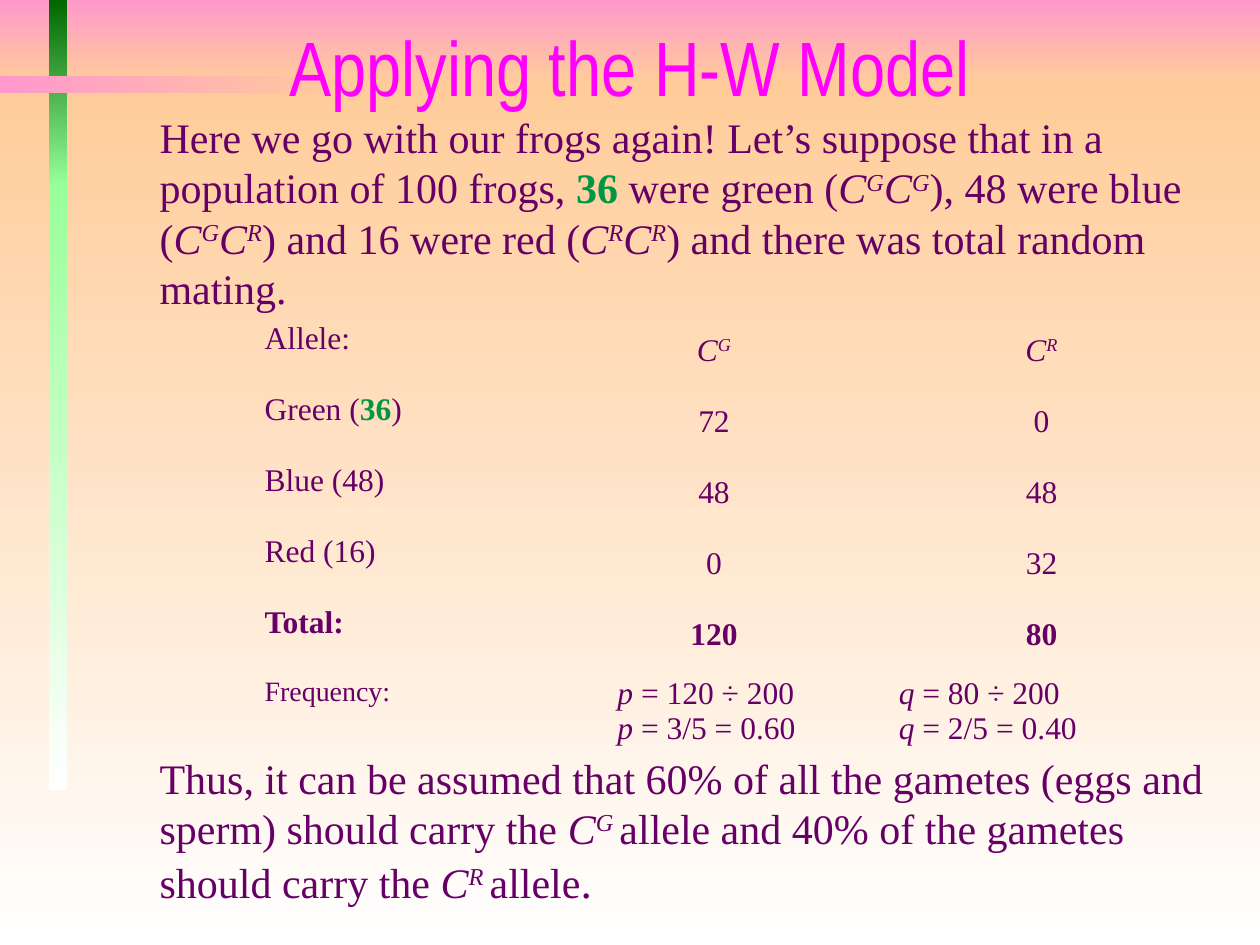
"""Build the slide that applies the Hardy-Weinberg model to a frog population."""
from lxml import etree
from pptx import Presentation
from pptx.dml.color import RGBColor
from pptx.enum.shapes import MSO_SHAPE
from pptx.enum.text import MSO_ANCHOR, MSO_AUTO_SIZE, PP_ALIGN
from pptx.oxml.ns import qn
from pptx.util import Pt

RECTANGLE = MSO_SHAPE.RECTANGLE
TOP, MIDDLE = MSO_ANCHOR.TOP, MSO_ANCHOR.MIDDLE
LEFT, CENTER = PP_ALIGN.LEFT, PP_ALIGN.CENTER
NO_AUTOFIT = MSO_AUTO_SIZE.NONE

PLUM = RGBColor(0x66, 0x00, 0x66)
MAGENTA = RGBColor(0xFF, 0x00, 0xFF)
FROG_GREEN = RGBColor(0x00, 0x96, 0x44)
PINK = RGBColor(0xFF, 0x99, 0xCC)
PEACH = RGBColor(0xFF, 0xCC, 0x99)
WHITE = RGBColor(0xFF, 0xFF, 0xFF)
DARK_GREEN = RGBColor(0x00, 0x66, 0x00)
LIGHT_GREEN = RGBColor(0x99, 0xFF, 0x99)

TITLE_FONT, TEXT_FONT = "Arial Narrow", "Times New Roman"
DOWN, RIGHTWARD = 270, 0
NO_TABLE_STYLE = "{2D5ABB26-0587-4C30-8999-92F81FD0307C}"

BACKDROP = [
    (0, 0, 720, 48, PINK, PEACH, DOWN),
    (0, 48, 720, 492, PEACH, WHITE, DOWN),
    (28, 0, 10.2, 106.5, DARK_GREEN, LIGHT_GREEN, DOWN),
    (28, 105, 10.2, 346.5, LIGHT_GREEN, WHITE, DOWN),
    (0, 43.4, 208, 10, PINK, PEACH, RIGHTWARD),
]


def allele(letter):
    """Return the spans of an allele symbol with its superscript."""
    return [("C", "italic"), (letter, "super")]


def genotype(first, second):
    """Return the spans of a bracketed pair of alleles."""
    return [("(", ""), *allele(first), *allele(second), (")", "")]


GREEN_COUNT = ("36", "green")
INTRO = [
    ("Here we go with our frogs again! Let’s suppose that in a population of 100 frogs, ", ""),
    GREEN_COUNT, (" were green ", ""), *genotype("G", "G"),
    (", 48 were blue ", ""), *genotype("G", "R"),
    (" and 16 were red ", ""), *genotype("R", "R"),
    (" and there was total random mating.", ""),
]
CONCLUSION = [
    ("Thus, it can be assumed that 60% of all the gametes (eggs and sperm) should carry the ", ""),
    *allele("G "), ("allele and 40% of the gametes should carry the ", ""),
    *allele("R "), ("allele", ""), (".", "large"),
]
COUNTS = [
    ([("Allele:", "")], allele("G"), allele("R")),
    ([("Green (", ""), GREEN_COUNT, (")", "")], [("72", "")], [("0", "")]),
    ([("Blue (48)", "")], [("48", "")], [("48", "")]),
    ([("Red (16)", "")], [("0", "")], [("32", "")]),
    ([("Total:", "bold")], [("120", "bold")], [("80", "bold")]),
]
FREQUENCIES = [("p", "= 120 ÷ 200", "= 3/5 = 0.60", 43.2),
               ("q", "= 80 ÷ 200", "= 2/5 = 0.40", 7.2)]


def write(paragraph, spans, size, align=LEFT):
    """Fill a paragraph with styled spans."""
    paragraph.alignment = align
    font = paragraph.font
    font.name, font.size, font.color.rgb = TEXT_FONT, Pt(size), PLUM
    for text, style in spans:
        run = paragraph.add_run()
        run.text = text
        if style in ("italic", "super"):
            run.font.italic = True
        if style in ("bold", "green"):
            run.font.bold = True
        if style == "super":
            run.font._element.set("baseline", "30000")
        if style == "green":
            run.font.color.rgb = FROG_GREEN
        if style == "large":
            run.font.size = Pt(size + 2)


def place(shape, left, top, width, height):
    """Move and size a shape."""
    shape.left, shape.top = Pt(left), Pt(top)
    shape.width, shape.height = Pt(width), Pt(height)


def add_band(slide, left, top, width, height, start, end, angle):
    """Add a borderless rectangle with a two-colour gradient."""
    band = slide.shapes.add_shape(RECTANGLE, Pt(left), Pt(top), Pt(width), Pt(height))
    band.shadow.inherit = False
    band.line.fill.background()
    band.fill.gradient()
    band.fill.gradient_angle = angle
    for stop, color in zip(band.fill.gradient_stops, (start, end)):
        stop.color.rgb = color


def fill_title(title):
    """Write and format the title."""
    place(title, 36, 3, 648, 69)
    frame = title.text_frame
    frame.text = "Applying the H-W Model"
    frame.auto_size, frame.vertical_anchor = NO_AUTOFIT, MIDDLE
    heading = frame.paragraphs[0]
    heading.alignment = CENTER
    heading.font.name, heading.font.size = TITLE_FONT, Pt(44)
    heading.font.color.rgb = MAGENTA


def fill_body(body):
    """Write the opening and closing paragraphs around the table."""
    place(body, 84, 60, 624, 480)
    frame = body.text_frame
    frame.auto_size, frame.vertical_anchor = NO_AUTOFIT, TOP
    intro, conclusion = frame.paragraphs[0], frame.add_paragraph()
    for paragraph, spans, gap in ((intro, INTRO, 0), (conclusion, CONCLUSION, 251)):
        properties = paragraph._p.get_or_add_pPr()
        properties.set("marL", "0")
        properties.set("indent", "0")
        etree.SubElement(properties, qn("a:buNone"))
        paragraph.space_before = Pt(gap)
        write(paragraph, spans, 24)


def add_allele_table(slide):
    """Add the table of allele counts and frequencies."""
    frame = slide.shapes.add_table(6, 3, Pt(144), Pt(180), Pt(540), Pt(282.2))
    table = frame.table
    table._tbl.tblPr.find(qn("a:tableStyleId")).text = NO_TABLE_STYLE
    table.first_row = table.horz_banding = False
    for column, width in zip(table.columns, (165.6, 196.8, 177.6)):
        column.width = Pt(width)
    for row, height in zip(table.rows, [40.6] * 5 + [79.2]):
        row.height = Pt(height)
    for cell in table.iter_cells():
        cell.fill.background()
    for row, entries in enumerate(COUNTS):
        for column, spans in enumerate(entries):
            cell = table.cell(row, column)
            cell.vertical_anchor = MIDDLE if column else TOP
            write(cell.text_frame.paragraphs[0], spans, 18, CENTER if column else LEFT)
    write(table.cell(5, 0).text_frame.paragraphs[0], [("Frequency:", "")], 16)
    for column, (symbol, ratio, result, margin) in enumerate(FREQUENCIES, 1):
        cell = table.cell(5, column)
        cell.margin_left = Pt(margin)
        lines = cell.text_frame
        for paragraph, value in ((lines.paragraphs[0], ratio), (lines.add_paragraph(), result)):
            write(paragraph, [(symbol + " ", "italic"), (value, "")], 18)


def main():
    """Build and save the slide."""
    deck = Presentation()
    deck.slide_width, deck.slide_height = Pt(720), Pt(540)
    slide = deck.slides.add_slide(deck.slide_layouts[1])
    title, body = slide.shapes.title, slide.placeholders[1]
    for band in BACKDROP:
        add_band(slide, *band)
    for placeholder in (title, body):
        slide.shapes._spTree.append(placeholder._element)
    fill_title(title)
    fill_body(body)
    add_allele_table(slide)
    deck.save("out.pptx")


if __name__ == "__main__":
    main()
